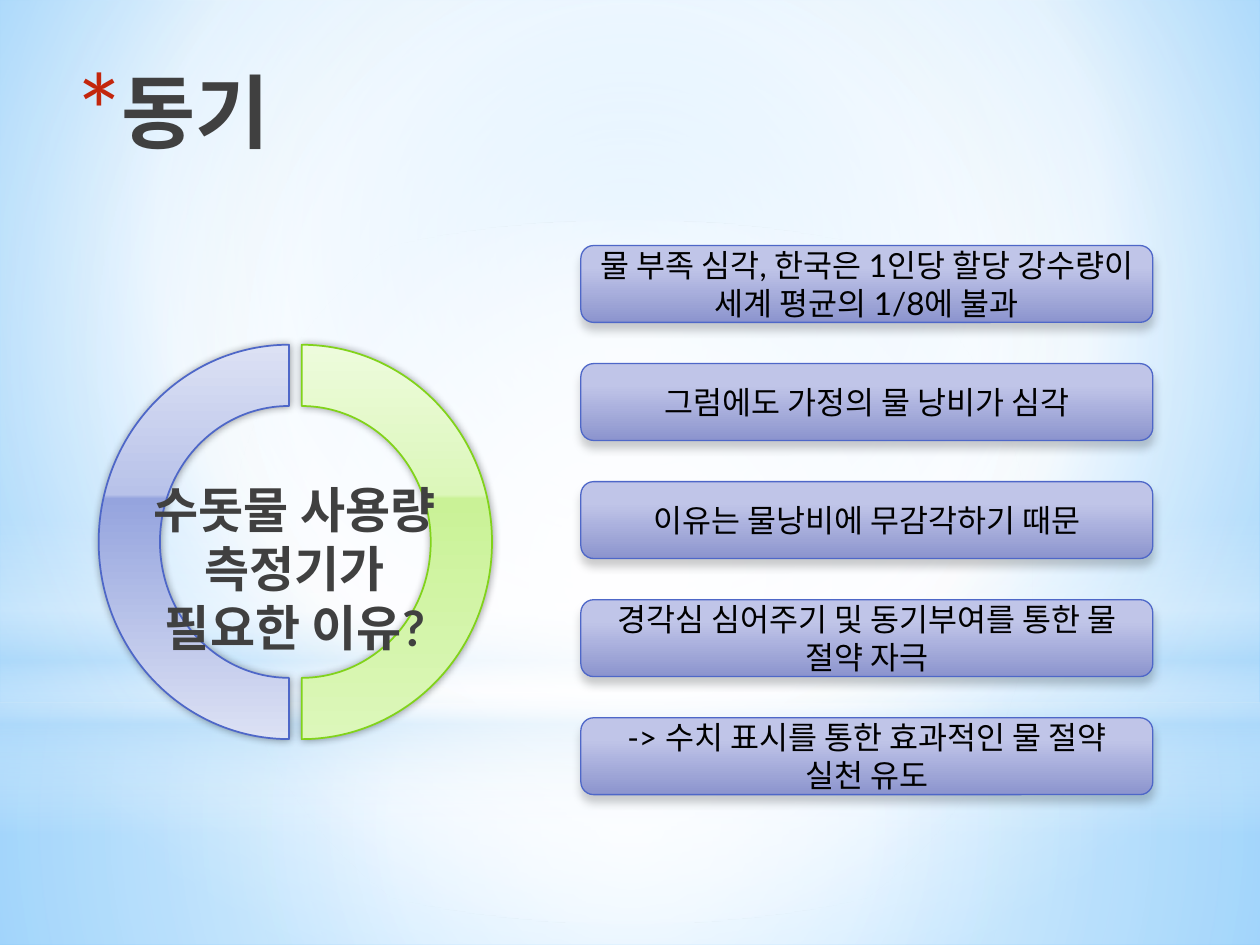
from lxml.etree import SubElement as Sub
from pptx import Presentation
from pptx.dml.color import RGBColor
from pptx.enum.shapes import MSO_SHAPE as Kind
from pptx.enum.text import MSO_ANCHOR as Anchor, PP_ALIGN as Align
from pptx.oxml.ns import qn
from pptx.util import Cm, Pt

FONT = "Lato"
TITLE = "동기"
CORE = "수돗물 사용량 측정기가 필요한 이유?"
REASONS = [
    "물 부족 심각, 한국은 1인당 할당 강수량이 세계 평균의 1/8에 불과",
    "그럼에도 가정의 물 낭비가 심각",
    "이유는 물낭비에 무감각하기 때문",
    "경각심 심어주기 및 동기부여를 통한 물 절약 자극",
    "-> 수치 표시를 통한 효과적인 물 절약 실천 유도",
]
MID = (50, 50, 50, 50)
SKY = [(0, "9ED5FF", 100), (60, "FFFFFF", 100), (100, "5BB9FF", 100)]
LAYERS = [
    (Kind.RECTANGLE, (0, 14.17, 25.4, 4.88), MID,
     [(0, "FFFFFF", 91), (37, "FFFFFF", 76), (100, "B4DCFA", 79)]),
    (Kind.RECTANGLE, (0, 0, 25.4, 14.17), MID,
     [(0, "FFFFFF", 89), (48, "FFFFFF", 62), (100, "B4DCFA", 79)]),
    (Kind.RECTANGLE, (0, 10.46, 25.4, 6.35), 90,
     [(0, "FFFFFF", 0), (29, "FFFFFF", 30), (45, "B4DCFA", 40),
      (55, "FFFFFF", 26), (65, "B4DCFA", 60), (100, "FFFFFF", 0)]),
    (Kind.OVAL, (0, 4.45, 25.4, 14.17), MID,
     [(0, "FFFFFF", 100), (56, "FFFFFF", 0)]),
]
ARCS = [
    (2.11, "flipH", 0, "81D31A", ["DCF7BA", "CAF297", "DCF7BA", "EDFBDC"]),
    (1.85, "flipV", 180, "4E67C8", ["DCE1F4", "95A4DE", "B8C2E9", "DCE1F4"]),
]
STEPS = (0, 61, 62, 100)
BAR = [(28, "C0C5E8", 100), (100, "8C94CE", 100)]
LEFT, TOP, WIDE, HIGH, PITCH = 11.71, 4.95, 11.53, 1.55, 2.38


def tint(code):
    return RGBColor.from_string(code)


def shade(fill, host, stops, way):
    fill.gradient()
    node = host.find(qn("a:gradFill"))
    for child in list(node):
        node.remove(child)
    node.set("rotWithShape", "1")
    row = Sub(node, qn("a:gsLst"))
    for pos, code, alpha in stops:
        stop = Sub(row, qn("a:gs"), pos=str(pos * 1000))
        color = Sub(stop, qn("a:srgbClr"), val=code)
        if alpha < 100:
            Sub(color, qn("a:alpha"), val=str(alpha * 1000))
    if isinstance(way, tuple):
        road = Sub(node, qn("a:path"), path="circle")
        Sub(road, qn("a:fillToRect"),
            **{side: str(v * 1000) for side, v in zip("ltrb", way)})
    else:
        Sub(node, qn("a:lin"), ang=str(way * 60000), scaled="0")


def cast(effects, alpha, blur, dist, angle):
    drop = Sub(effects, qn("a:outerShdw"), blurRad=str(Pt(blur)), dist=str(Pt(dist)),
               dir=str(angle * 60000), algn="ctr", rotWithShape="0")
    color = Sub(drop, qn("a:srgbClr"), val="000000")
    Sub(color, qn("a:alpha"), val=str(alpha * 1000))


def draw(kind, box, stops, way, edge=None, width=1, drop=None):
    shape = slide.shapes.add_shape(kind, *map(Cm, box))
    shape.shadow.inherit = False
    props = shape._element.spPr
    shade(shape.fill, props, stops, way)
    if edge:
        shape.line.color.rgb = tint(edge)
        shape.line.width = Pt(width)
    else:
        shape.line.fill.background()
    if drop:
        cast(props.find(qn("a:effectLst")), *drop)
    return shape


def write(shape, text, size, code, bold=False, align=Align.CENTER, anchor=Anchor.MIDDLE):
    frame = shape.text_frame
    frame.text = text
    frame.word_wrap = True
    frame.vertical_anchor = anchor
    par = frame.paragraphs[0]
    par.alignment = align
    font = par.runs[0].font
    font.name, font.size, font.bold = FONT, Pt(size), bold
    font.color.rgb = tint(code)
    return par


deck = Presentation()
deck.slide_width, deck.slide_height = Cm(25.4), Cm(19.05)
slide = deck.slides.add_slide(deck.slide_layouts[5])
sky = slide.background.fill
sky.solid()
shade(sky, slide._element.cSld.bg.bgPr, SKY, (20, 10, 20, 60))

for kind, box, way, stops in LAYERS:
    draw(kind, box, stops, way)

title = slide.shapes.title
title.left, title.top, title.width, title.height = map(Cm, (1.3, 1.12, 18.08, 3.18))
slide.shapes._spTree.append(title._element)
par = write(title, TITLE, 46, "404040", True, Align.LEFT, Anchor.TOP)
props = par._p.get_or_add_pPr()
props.set("marL", str(Cm(0.89)))
props.set("indent", str(Cm(-0.89)))
Sub(Sub(props, qn("a:buClr")), qn("a:srgbClr"), val="C3260C")
Sub(props, qn("a:buSzPct"), val="128000")
Sub(props, qn("a:buFont"), typeface=FONT)
Sub(props, qn("a:buChar"), char="*")

for left, flip, way, edge, codes in ARCS:
    stops = [(pos, code, 100) for pos, code in zip(STEPS, codes)]
    arc = draw(Kind.BLOCK_ARC, (left, 7.09, 7.95, 7.67), stops, way, edge, 1, (40, 5, 0, 0))
    arc.rotation = 90
    arc._element.spPr.xfrm.set(flip, "1")
    for i, value in enumerate((108, 0, 0.161)):
        arc.adjustments[i] = value

core = slide.shapes.add_textbox(*map(Cm, (2.44, 9.53, 7.01, 3.84)))
run = write(core, CORE, 28, "404040", True).runs[0]
look = run._r.get_or_add_rPr()
look.set("spc", "10")
glow = Sub(look, qn("a:effectLst"))
look.find(qn("a:solidFill")).addnext(glow)
cast(glow, 40, 4, 2, 90)

for i, text in enumerate(REASONS):
    bar = draw(Kind.ROUNDED_RECTANGLE, (LEFT, TOP + i * PITCH, WIDE, HIGH),
               BAR, 90, "4E67C8", 0.75, (20, 5, 4, 90))
    write(bar, text, 18, "000000")

deck.save("out.pptx")
